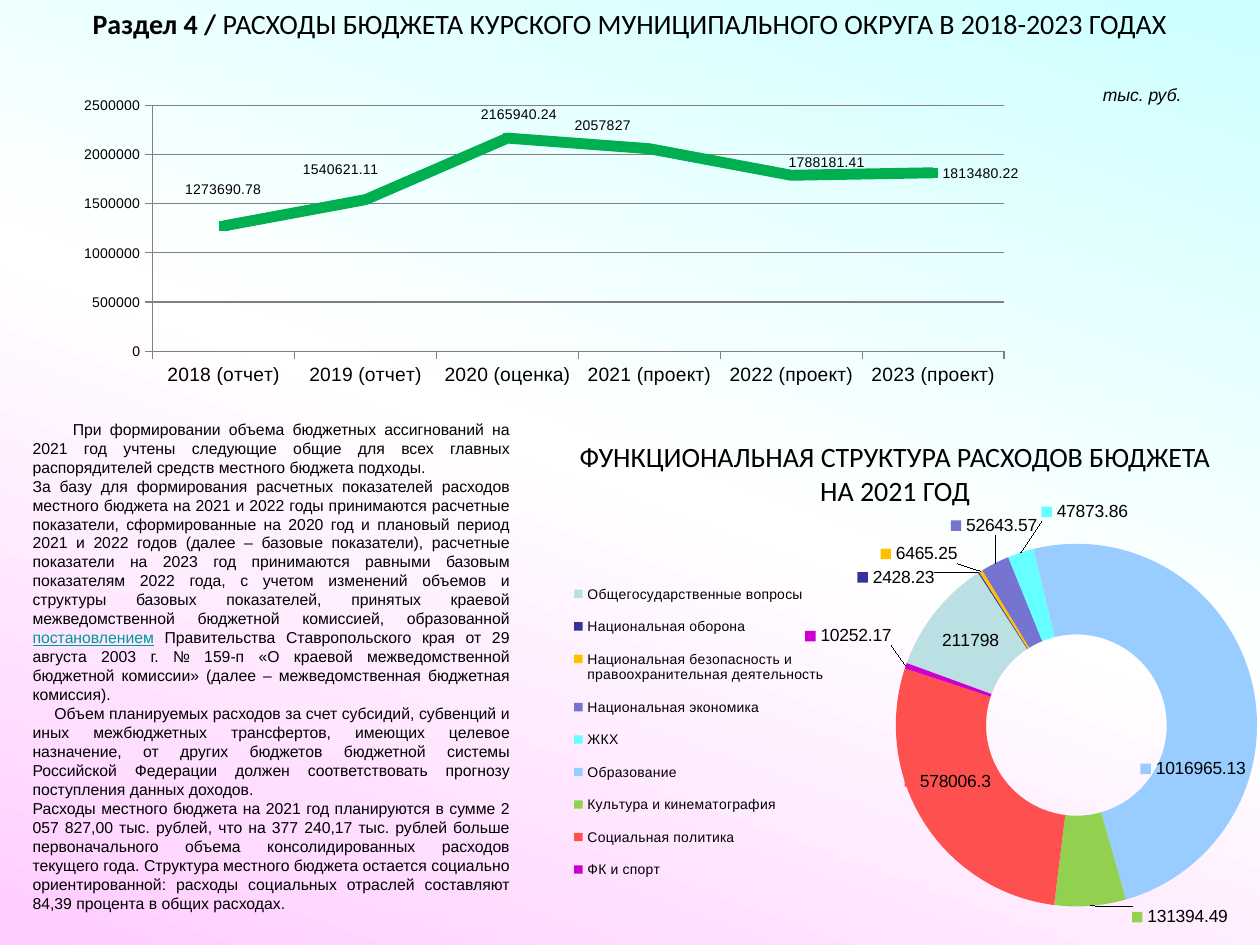
from lxml.etree import SubElement
from pptx import Presentation
from pptx.chart.data import CategoryChartData
from pptx.dml.color import RGBColor
from pptx.enum.chart import XL_CHART_TYPE, XL_LEGEND_POSITION, XL_TICK_MARK
from pptx.enum.text import MSO_AUTO_SIZE, PP_ALIGN
from pptx.oxml import parse_xml
from pptx.oxml.ns import nsdecls, qn
from pptx.util import Pt

YEARS = {
    "2018 (отчет)": 1273690.78,
    "2019 (отчет)": 1540621.11,
    "2020 (оценка)": 2165940.24,
    "2021 (проект)": 2057827,
    "2022 (проект)": 1788181.41,
    "2023 (проект)": 1813480.22,
}
YEAR_LABEL_SHIFTS = [(-0.04, -0.11), (-0.06, -0.09), (-0.03, -0.07), (-0.07, -0.07), (-0.01, -0.04)]

SECTORS = [
    ("Общегосударственные вопросы", 211798, "BBE0E3", None),
    ("Национальная оборона", 2428.23, "333399", (-0.15, -0.06)),
    ("Национальная безопасность и правоохранительная деятельность", 6465.25, "FFC000", (-0.12, -0.1)),
    ("Национальная экономика", 52643.57, "7575D1", (-0.03, -0.14)),
    ("ЖКХ", 47873.86, "66FFFF", (0.07, -0.15)),
    ("Образование", 1016965.13, "99CCFF", (-0.02, 0.14)),
    ("Культура и кинематография", 131394.49, "92D050", (0.13, 0.1)),
    ("Социальная политика", 578006.3, "FF5050", (-0.02, -0.03)),
    ("ФК и спорт", 10252.17, "CC00CC", (-0.14, -0.08)),
]

LINK = "постановлением"
BODY = [
    (23, "При формировании объема бюджетных ассигнований на 2021 год учтены следующие общие для всех главных "
         "распорядителей средств местного бюджета подходы."),
    (0, "За базу для формирования расчетных показателей расходов местного бюджета на 2021 и 2022 годы принимаются "
        "расчетные показатели, сформированные на 2020 год и плановый период 2021 и 2022 годов (далее – базовые "
        "показатели), расчетные показатели на 2023 год принимаются равными базовым показателям 2022 года, с учетом "
        "изменений объемов и структуры базовых показателей, принятых краевой межведомственной бюджетной комиссией, "
        "образованной постановлением Правительства Ставропольского края от 29 августа 2003 г. № 159-п «О краевой "
        "межведомственной бюджетной комиссии» (далее – межведомственная бюджетная комиссия)."),
    (12.5, "Объем планируемых расходов за счет субсидий, субвенций и иных межбюджетных трансфертов, имеющих целевое "
           "назначение, от других бюджетов бюджетной системы Российской Федерации должен соответствовать прогнозу "
           "поступления данных доходов."),
    (0, "Расходы местного бюджета на 2021 год планируются в сумме 2 057 827,00 тыс. рублей, что на 377 240,17 тыс. "
        "рублей больше первоначального объема консолидированных расходов текущего года. Структура местного бюджета "
        "остается социально ориентированной: расходы социальных отраслей составляют 84,39 процента в общих расходах."),
]


def color(value):
    """Turn a hex string into a colour."""
    return RGBColor.from_string(value)


def set_font(font, size, name="Arial", value="000000"):
    """Set the face, size and colour of a font."""
    font.name, font.size = name, Pt(size)
    font.color.rgb = color(value)


def paint_background(slide):
    """Fill the slide with the three-colour diagonal gradient."""
    fill = slide.background.fill
    fill.gradient()
    fill.gradient_angle = 250
    stops = next(slide.element.iter(qn("a:gsLst")))
    for stop in list(stops):
        stops.remove(stop)
    for position, value in ((0, "CCFFFF"), (50000, "FFFFFF"), (100000, "FFCCFF")):
        stop = SubElement(stops, qn("a:gs"), pos=str(position))
        SubElement(stop, qn("a:srgbClr"), val=value)


def add_text(slide, box, paragraphs, size, name="Arial", align=PP_ALIGN.CENTER):
    """Add a text box whose paragraphs are lists of run texts."""
    shape = slide.shapes.add_textbox(*map(Pt, box))
    frame = shape.text_frame
    frame.word_wrap = True
    frame.auto_size = MSO_AUTO_SIZE.SHAPE_TO_FIT_TEXT
    for index, texts in enumerate(paragraphs):
        paragraph = frame.add_paragraph() if index else frame.paragraphs[0]
        paragraph.alignment = align
        for text in texts:
            run = paragraph.add_run()
            run.text = text
            set_font(run.font, size, name)
    return frame.paragraphs


def add_body(slide, box):
    """Add the justified explanation with its underlined term."""
    texts = []
    for _, text in BODY:
        before, link, after = text.partition(LINK)
        texts.append([part for part in (before, link, after) if part])
    paragraphs = add_text(slide, box, texts, 9, align=PP_ALIGN.JUSTIFY)
    for paragraph, (indent, _) in zip(paragraphs, BODY):
        paragraph._p.get_or_add_pPr().set("indent", str(Pt(indent)))
        for run in paragraph.runs:
            if run.text == LINK:
                run.font.underline = True
                run.font.color.rgb = color("009999")


def manual_layout(left, top, width=None, height=None, inner=False):
    """Build a chart layout from fractions of the chart area."""
    layout = parse_xml(f"<c:layout {nsdecls('c')}><c:manualLayout/></c:layout>")
    values = {"x": left, "y": top}
    if width is not None:
        values = {"xMode": "edge", "yMode": "edge", **values, "w": width, "h": height}
    if inner:
        values = {"layoutTarget": "inner", **values}
    for tag, value in values.items():
        SubElement(layout[0], qn(f"c:{tag}"), val=str(value))
    return layout


def replace_layout(parent, index, layout):
    """Put a layout at the given child position, in place of any other."""
    for old in parent.findall(qn("c:layout")):
        parent.remove(old)
    parent.insert(index, layout)


def add_chart(slide, box, kind, categories, values, size, plot_box):
    """Add a one-series chart with a fixed plot area."""
    data = CategoryChartData()
    data.categories = categories
    data.add_series("Series 1", values)
    chart = slide.shapes.add_chart(kind, *map(Pt, box), data).chart
    chart.has_title = chart.has_legend = False
    set_font(chart.font, size)
    area = next(chart.element.iter(qn("c:plotArea")))
    replace_layout(area, 0, manual_layout(*plot_box, inner=True))
    return chart


def label_points(series, size, shifts, leaders, keys):
    """Show values and move the labels that have a shift."""
    labels = series.data_labels
    labels.show_value = True
    set_font(labels.font, size)
    for index, shift in enumerate(shifts):
        if shift:
            set_font(series.points[index].data_label.font, size)
            label = series._element.xpath(f'c:dLbls/c:dLbl[c:idx/@val="{index}"]')[0]
            replace_layout(label, 1, manual_layout(*shift))
            label.find(qn("c:showLegendKey")).set("val", str(int(keys)))
    for element in series._element.iter(qn("c:showLeaderLines")):
        element.set("val", str(int(leaders)))


def add_line_chart(slide, box):
    """Add the line of yearly spending."""
    chart = add_chart(slide, box, XL_CHART_TYPE.LINE_MARKERS, list(YEARS), list(YEARS.values()), 8,
                      (0.078, 0.051, 0.709, 0.734))
    series = chart.plots[0].series[0]
    chart.plots[0].vary_by_categories = series.smooth = False
    series.format.line.color.rgb = color("00B050")
    series.format.line.width = Pt(6.25)
    series.marker.size = 5
    series.marker.format.fill.solid()
    series.marker.format.fill.fore_color.rgb = color("00B050")
    series.marker.format.line.color.rgb = color("00B050")
    label_points(series, 8, YEAR_LABEL_SHIFTS, False, False)
    chart.value_axis.has_major_gridlines = True
    for axis, size in ((chart.category_axis, 11), (chart.value_axis, 8)):
        axis.major_tick_mark = XL_TICK_MARK.OUTSIDE
        axis.format.line.color.rgb = color("808080")
        set_font(axis.tick_labels.font, size)
    chart.value_axis.major_gridlines.format.line.color.rgb = color("808080")


def add_doughnut_chart(slide, box):
    """Add the ring of spending by sector with its legend."""
    names, values, colors, shifts = zip(*SECTORS)
    chart = add_chart(slide, box, XL_CHART_TYPE.DOUGHNUT, names, values, 18, (0.495, 0.247, 0.505, 0.722))
    chart.plots[0].vary_by_categories = True
    series = chart.plots[0].series[0]
    for index, value in enumerate(colors):
        fill = series.points[index].format.fill
        fill.solid()
        fill.fore_color.rgb = color(value)
    label_points(series, 10, shifts, True, True)
    for tag, value in (("c:firstSliceAng", "290"), ("c:holeSize", "39")):
        next(chart.element.iter(qn(tag))).set("val", value)
    chart.has_legend = True
    chart.legend.position = XL_LEGEND_POSITION.RIGHT
    chart.legend.include_in_layout = False
    set_font(chart.legend.font, 8)
    replace_layout(chart.legend._element, 1, manual_layout(0.03, 0.33, 0.38, 0.58))


def main():
    """Build the budget spending slide."""
    presentation = Presentation()
    presentation.slide_width, presentation.slide_height = Pt(720), Pt(540)
    slide = presentation.slides.add_slide(presentation.slide_layouts[6])
    paint_background(slide)
    title = add_text(slide, (0, 0, 720, 26.6), [[
        "Раздел 4 / ", "РАСХОДЫ БЮДЖЕТА КУРСКОГО МУНИЦИПАЛЬНОГО ОКРУГА В 2018-2023 ГОДАХ"]], 16, "Calibri")
    title[0].runs[0].font.bold = True
    add_line_chart(slide, (33.8, 50.4, 686.2, 191.5))
    add_body(slide, (11.5, 236.2, 286.6, 290.9))
    add_text(slide, (314.6, 247.7, 393.8, 46), [["ФУНКЦИОНАЛЬНАЯ СТРУКТУРА РАСХОДОВ БЮДЖЕТА НА 2021 ГОД"]],
             16, "Calibri")
    add_doughnut_chart(slide, (309.6, 219.6, 410.4, 320.4))
    unit = add_text(slide, (596.2, 44.6, 113, 19.4), [["тыс. руб."]], 10)
    unit[0].runs[0].font.italic = True
    presentation.save("out.pptx")


if __name__ == "__main__":
    main()
